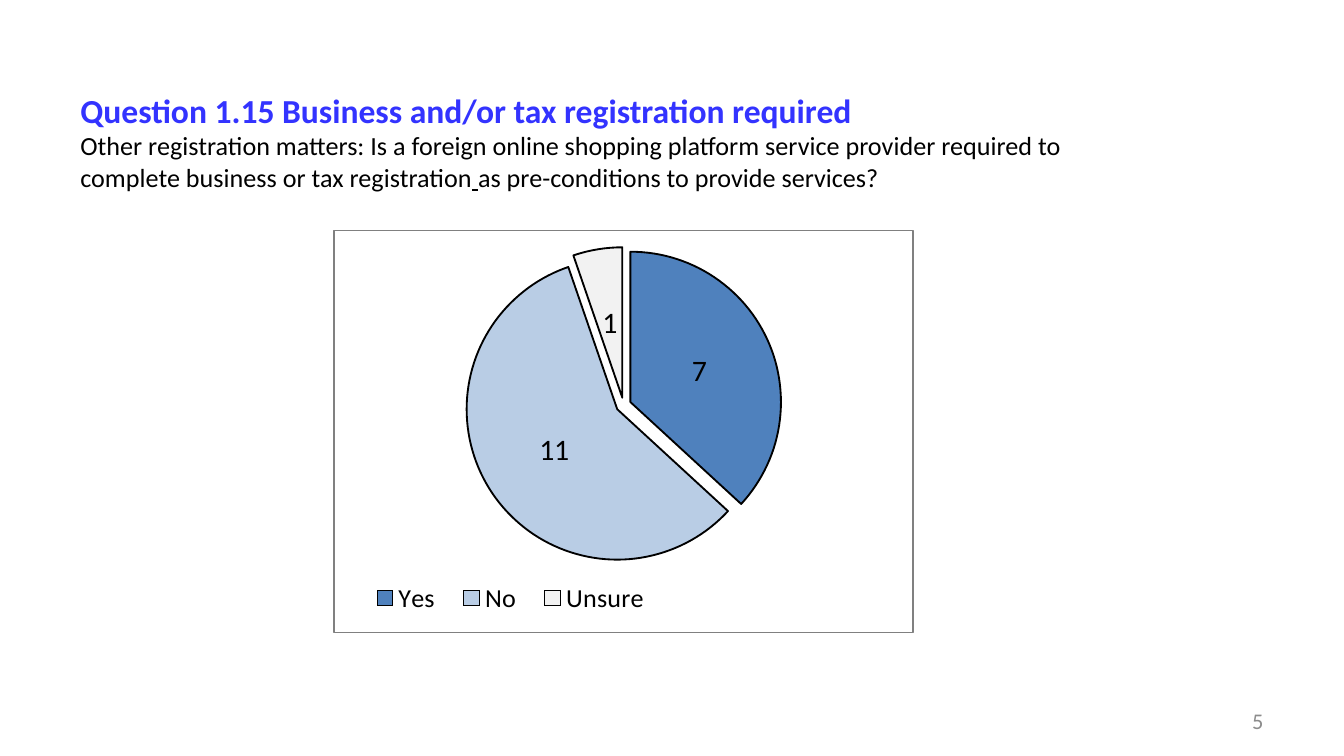
from lxml import etree
from pptx import Presentation
from pptx.chart.data import CategoryChartData
from pptx.dml.color import RGBColor
from pptx.enum.chart import XL_CHART_TYPE, XL_LABEL_POSITION, XL_LEGEND_POSITION
from pptx.enum.text import MSO_ANCHOR, PP_ALIGN
from pptx.oxml import parse_xml
from pptx.oxml.ns import nsdecls, qn
from pptx.util import Inches, Pt

PIE = XL_CHART_TYPE.PIE
BOTTOM = XL_LEGEND_POSITION.BOTTOM
CENTER = XL_LABEL_POSITION.CENTER
MIDDLE = MSO_ANCHOR.MIDDLE
RIGHT = PP_ALIGN.RIGHT

HEADING = "Question 1.15 Business and/or tax registration required "
QUESTION = [  # text, underlined
    ("Other registration matters: Is a foreign online shopping platform service "
     "provider required to complete business or tax registration", False),
    (" ", True),
    ("as pre-conditions to provide services?", False),
]
PAGE = "5"
ANSWERS = [("Yes", 7, "4F81BD"), ("No", 11, "B9CDE5"), ("Unsure", 1, "F2F2F2")]
EXPLOSION = 5

THEME = {
    "font": "Calibri", "heading": "3333FF", "text": "000000", "page": "8C8C8C",
    "border": "808080", "heading_pt": 18, "body_pt": 14, "page_pt": 12,
    "chart_pt": 10, "legend_pt": 14, "label_pt": 16,
}

WIDTH = 10
HEIGHT = WIDTH * 9 / 16
TITLE_BOX = (0.5, 0, 7.96, 2.1)
PAGE_BOX = (7.17, 5.21, 2.33, 0.3)
CHART_BOX = (2.48, 1.71, 4.32, 3)
PLOT_SHARE = (0.24, 0.06, 0.52, 0.75)  # x, y, w, h within the chart
LEGEND_SHARE = (0.04, 0.86, 0.53, 0.11)


def style(font, size, color, bold=None):
    font.name, font.size, font.bold = THEME["font"], Pt(size), bold
    font.color.rgb = RGBColor.from_string(color)


def text_frame(s, box):
    tf = s.shapes.add_textbox(*map(Inches, box)).text_frame
    tf.word_wrap, tf.vertical_anchor = True, MIDDLE
    return tf


def manual_layout(share, inner=False):
    """Return a c:layout element placing a chart part by shares of the chart."""
    values = [("layoutTarget", "inner")] if inner else []
    values += [("xMode", "edge"), ("yMode", "edge"), *zip("xywh", share)]
    layout = etree.Element(qn("c:layout"))
    manual = etree.SubElement(layout, qn("c:manualLayout"))
    for tag, value in values:
        etree.SubElement(manual, qn(f"c:{tag}")).set("val", str(value))
    return layout


def add_title(s):
    p = text_frame(s, TITLE_BOX).paragraphs[0]
    r = p.add_run()
    r.text = HEADING
    style(r.font, THEME["heading_pt"], THEME["heading"], True)
    p.add_line_break()
    for text, underlined in QUESTION:
        r = p.add_run()
        r.text = text
        style(r.font, THEME["body_pt"], THEME["text"], False)
        r.font.underline = underlined


def add_page_number(s):
    p = text_frame(s, PAGE_BOX).paragraphs[0]
    p.text, p.alignment = PAGE, RIGHT
    style(p.font, THEME["page_pt"], THEME["page"])


def add_answer_pie(s):
    data = CategoryChartData()
    data.categories = [name for name, _, _ in ANSWERS]
    data.add_series("Series 1", [count for _, count, _ in ANSWERS])
    chart = s.shapes.add_chart(PIE, *map(Inches, CHART_BOX), data).chart
    chart.has_title = False
    style(chart.font, THEME["chart_pt"], THEME["text"])

    plot = chart.plots[0]
    plot.vary_by_categories = True
    series = plot.series[0]
    for i, (_, _, color) in enumerate(ANSWERS):
        fmt = series.points[i].format
        fmt.fill.solid()
        fmt.fill.fore_color.rgb = RGBColor.from_string(color)
        fmt.line.color.rgb = RGBColor.from_string(THEME["text"])
        fmt.line.width = Pt(1)
    for point in series._element.findall(qn("c:dPt")):
        explosion = etree.Element(qn("c:explosion"), val=str(EXPLOSION))
        point.find(qn("c:spPr")).addprevious(explosion)

    labels = series.data_labels
    labels.show_value, labels.position = True, CENTER
    style(labels.font, THEME["label_pt"], THEME["text"])

    chart.has_legend = True
    legend = chart.legend
    legend.position, legend.include_in_layout = BOTTOM, False
    style(legend.font, THEME["legend_pt"], THEME["text"])

    space = chart._chartSpace
    area = space.find(".//" + qn("c:plotArea"))
    for part in (area, legend._element):
        for old in part.findall(qn("c:layout")):
            part.remove(old)
    area.insert(0, manual_layout(PLOT_SHARE, inner=True))
    legend._element.find(qn("c:legendPos")).addnext(manual_layout(LEGEND_SHARE))
    space.find(qn("c:chart")).addnext(parse_xml(
        f'<c:spPr {nsdecls("c", "a")}><a:noFill/><a:ln w="{Pt(0.75)}"><a:solidFill>'
        f'<a:srgbClr val="{THEME["border"]}"/></a:solidFill></a:ln></c:spPr>'))


def main():
    prs = Presentation()
    prs.slide_width, prs.slide_height = Inches(WIDTH), Inches(HEIGHT)
    s = prs.slides.add_slide(prs.slide_layouts[6])
    add_title(s)
    add_page_number(s)
    add_answer_pie(s)
    prs.save("out.pptx")


if __name__ == "__main__":
    main()
